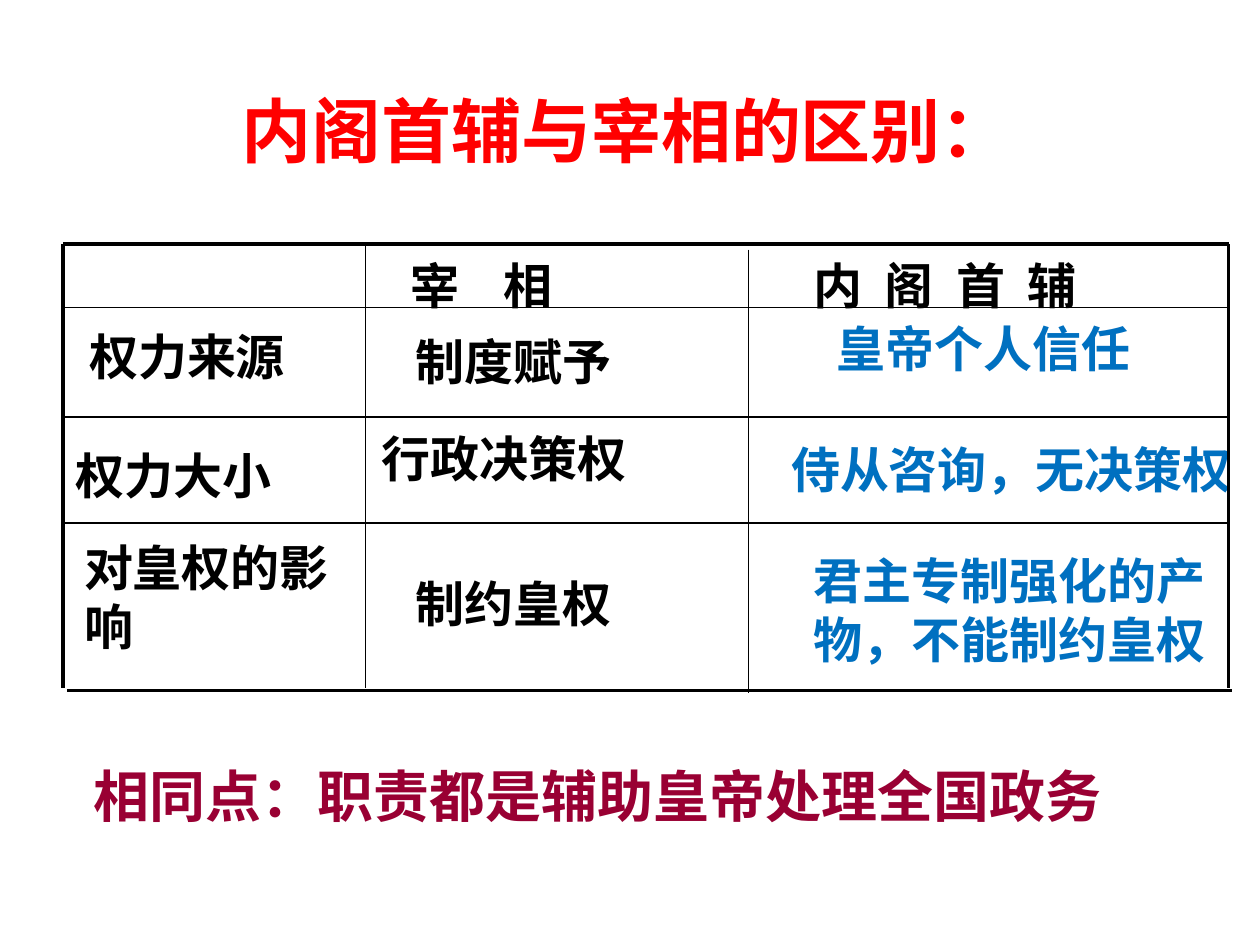
import pptx
import pptx.util
import pptx.dml.color
import pptx.enum.shapes
import pptx.enum.text
from lxml import etree

Pt = pptx.util.Pt
COLORS = {"title": "FF0000", "label": "000000", "contrast": "0070C0",
          "summary": "990033", "rule": "000000"}
CJK = "Noto Sans CJK SC"
LINE_RATIO = 1.2
INSET_SIDE = 7.2
INSET_TOP = 3.6


def add_text(slide, box, text, size, color, font="Arial"):
    shape = slide.shapes.add_textbox(*map(Pt, box))
    frame = shape.text_frame
    frame_format = {
        "word_wrap": True,
        "auto_size": pptx.enum.text.MSO_AUTO_SIZE.NONE,
        "margin_left": Pt(INSET_SIDE),
        "margin_right": Pt(INSET_SIDE),
        "margin_top": Pt(INSET_TOP + size * 0.1),
        "margin_bottom": Pt(0),
    }
    for name, value in frame_format.items():
        setattr(frame, name, value)
    paragraph = frame.paragraphs[0]
    paragraph.line_spacing = Pt(size * LINE_RATIO)
    run = paragraph.add_run()
    run.text = text
    for name, value in {"size": Pt(size), "bold": True, "name": font}.items():
        setattr(run.font, name, value)
    run.font.color.rgb = pptx.dml.color.RGBColor.from_string(COLORS[color])
    east_asian = etree.SubElement(run.font._element, pptx.oxml.ns.qn("a:ea"))
    east_asian.set("typeface", CJK)


def add_rule(slide, start, end, weight):
    connector = slide.shapes.add_connector(
        pptx.enum.shapes.MSO_CONNECTOR.STRAIGHT, *map(Pt, (*start, *end)))
    connector.line.width = Pt(weight)
    connector.line.color.rgb = pptx.dml.color.RGBColor.from_string(COLORS["rule"])
    etree.SubElement(connector._element.spPr, pptx.oxml.ns.qn("a:effectLst"))


def add_title(slide, box):
    add_text(slide, box, "内阁首辅与宰相的区别：", 40, "title")


def add_grid(slide, box):
    left, top, width, height = box
    thick, thin = 2.25, 1
    rows = [(0, 0, thick), (36, 0, thin), (98.6, 0, thin),
            (159, 0, thin), (254.9, 2.2, thick)]
    columns = [(0, 0, thick), (172.8, 0, thin), (391.7, 2.9, thin), (width, 0, thick)]
    for y, shift, weight in rows:
        add_rule(slide, (left + shift, top + y), (left + shift + width, top + y), weight)
    for x, shift, weight in columns:
        add_rule(slide, (left + x, top + shift), (left + x, top + shift + height), weight)


def add_cells(slide, box):
    left, top, _, _ = box
    cells = [
        (191.5, 0, 247.7, 38.2, "宰    相", "label", CJK),
        (421.9, 0, 246.2, 34.6, "内  阁  首  辅", "label", CJK),
        (7.9, 40.3, 172.8, 116.6, "权力来源", "label", "Arial"),
        (194.4, 43.2, 247.7, 65.5, "制度赋予", "label", "Arial"),
        (434.9, 36, 246.2, 65.5, "皇帝个人信任", "contrast", "Arial"),
        (0, 108.7, 172.8, 62.6, "权力大小", "label", "Arial"),
        (175, 98.6, 247.7, 62.6, "行政决策权", "label", "Arial"),
        (409, 105.1, 277.9, 62.6, "侍从咨询，无决策权", "contrast", CJK),
        (5, 161.3, 172.8, 87.1, "对皇权的影响", "label", CJK),
        (194.4, 181.4, 247.7, 87.1, "制约皇权", "label", "Arial"),
        (421.9, 168.5, 246.2, 87.1, "君主专制强化的产物，不能制约皇权", "contrast", "Arial"),
    ]
    for x, y, width, height, text, color, font in cells:
        add_text(slide, (left + x, top + y, width, height), text, 28, color, font)


def add_summary(slide, box):
    add_text(slide, box, "相同点：职责都是辅助皇帝处理全国政务", 32, "summary", CJK)


def main():
    presentation = pptx.Presentation()
    presentation.slide_width, presentation.slide_height = Pt(720), Pt(540)
    slide = presentation.slides.add_slide(presentation.slide_layouts[6])
    comparison_box = (36, 139.7, 666, 253.4)
    add_cells(slide, comparison_box)
    add_grid(slide, comparison_box)
    add_title(slide, (131, 42.5, 491.8, 55.4))
    add_summary(slide, (46.1, 428.4, 678.2, 45.4))
    presentation.save("out.pptx")


if __name__ == "__main__":
    main()
